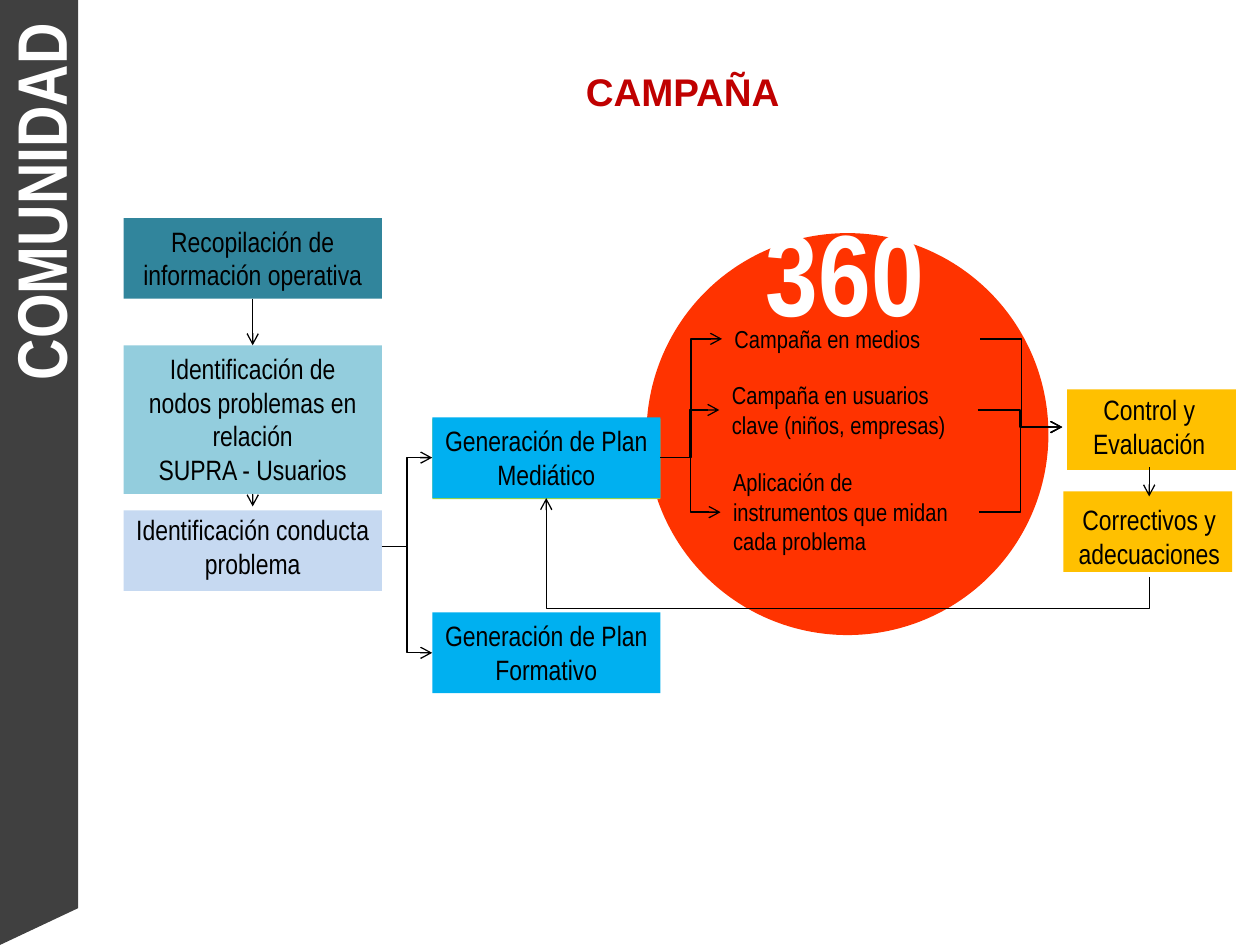
from lxml import etree
from pptx import Presentation
from pptx.dml.color import RGBColor
from pptx.enum.shapes import MSO_CONNECTOR, MSO_SHAPE
from pptx.enum.text import MSO_ANCHOR, MSO_AUTO_SIZE, PP_ALIGN
from pptx.oxml.ns import qn
from pptx.util import Pt

RECTANGLE, OVAL = MSO_SHAPE.RECTANGLE, MSO_SHAPE.OVAL
STRAIGHT, ELBOW = MSO_CONNECTOR.STRAIGHT, MSO_CONNECTOR.ELBOW
LEFT, CENTER = PP_ALIGN.LEFT, PP_ALIGN.CENTER
TOP = MSO_ANCHOR.TOP
NO_FIT = MSO_AUTO_SIZE.NONE
TOP_SIDE, BOTTOM_SIDE = 0, 2
NARROW = "Arial Narrow"
BLACK, WHITE = "000000", "FFFFFF"
STEP_HEIGHT = 46.1


def color(value):
    return RGBColor.from_string(value)


def write(shape, text, size, hue=BLACK, align=CENTER, font=NARROW, bold=False, wrap=True):
    frame = shape.text_frame
    frame.text = text
    frame.word_wrap = wrap
    frame.auto_size = NO_FIT
    frame.vertical_anchor = TOP
    for para in frame.paragraphs:
        para.alignment = align
        para.font.size = Pt(size)
        for span in para.runs:
            span.font.name = font
            span.font.size = Pt(size)
            span.font.bold = bold
            span.font.color.rgb = color(hue)


def paint(shape, fill):
    shape.shadow.inherit = False
    shape.fill.solid()
    shape.fill.fore_color.rgb = color(fill)
    shape.line.fill.background()


def add_block(page, box, fill, text="", kind=RECTANGLE):
    block = page.shapes.add_shape(kind, *map(Pt, box))
    paint(block, fill)
    if text:
        write(block, text, 16)
    return block


def add_label(page, box, text, size=16, **style):
    label = page.shapes.add_textbox(*map(Pt, box))
    write(label, text, size, **style)
    return label


def side_points(shape):
    """Middles of the left, top, right and bottom sides, in points."""
    left, top = shape.left.pt, shape.top.pt
    width, height = shape.width.pt, shape.height.pt
    return ((left, top + height / 2), (left + width / 2, top),
            (left + width, top + height / 2), (left + width / 2, top + height))


def add_arrow(page, kind, start, end, head=True):
    arrow = page.shapes.add_connector(kind, *map(Pt, (*start, *end)))
    arrow.line.color.rgb = color(BLACK)
    arrow.line.width = Pt(0.75)
    if head:
        tail = etree.SubElement(arrow.line._get_or_add_ln(), qn("a:tailEnd"))
        tail.set("type", "arrow")
    etree.SubElement(arrow._element.spPr, qn("a:effectLst"))
    return arrow


def link_down(page, upper, lower):
    arrow = add_arrow(page, STRAIGHT, side_points(upper)[3], side_points(lower)[1])
    arrow.begin_connect(upper, BOTTOM_SIDE)
    arrow.end_connect(lower, TOP_SIDE)


def link_across(page, source, target):
    add_arrow(page, ELBOW, side_points(source)[2], side_points(target)[0])


def link_back(page, source, target, drop=18):
    """Leave the source downwards, run left and rise to the target."""
    (start_x, start_y), (end_x, end_y) = side_points(source)[3], side_points(target)[3]
    middle_x, middle_y = (start_x + end_x) / 2, (start_y + end_y) / 2
    half_width, half_height = (start_y - end_y) / 2, (start_x - end_x) / 2
    arrow = add_arrow(page, ELBOW, (middle_x + half_width, middle_y - half_height),
                      (middle_x - half_width, middle_y + half_height))
    properties = arrow._element.spPr
    properties.find(qn("a:xfrm")).set("rot", "5400000")
    geometry = properties.find(qn("a:prstGeom"))
    guides = geometry.find(qn("a:avLst"))
    if guides is None:
        guides = etree.SubElement(geometry, qn("a:avLst"))
    guide = etree.SubElement(guides, qn("a:gd"))
    guide.set("name", "adj1")
    guide.set("fmla", f"val {round(-drop / (2 * half_width) * 100000)}")


def add_title(page, box):
    title = page.shapes.title
    title.left, title.top, title.width, title.height = map(Pt, box)
    write(title, "CAMPAÑA", 22, "C00000", LEFT, "Arial", bold=True)


def add_sidebar(page, box):
    left, top, width, height = box
    builder = page.shapes.build_freeform(Pt(left), Pt(top))
    corners = [(left + width, top), (left + width, top + height - 21), (left, top + height)]
    builder.add_line_segments([(Pt(x), Pt(y)) for x, y in corners], close=True)
    paint(builder.convert_to_shape(), "404040")
    label = add_label(page, (left - 87.8, top + 86.4, 220.3, 55.4), "COMUNIDAD", 40,
                      hue=WHITE, align=LEFT, bold=True, wrap=False)
    label.rotation = 270


def add_diagnosis(page, box):
    """Left column of steps; returns the last one."""
    left, top, width, _ = box
    gather = add_block(page, (left, top, width, STEP_HEIGHT), "31859C",
                       "Recopilación de información operativa")
    nodes = add_block(page, (left, top + 72.7, width, 85), "93CDDD",
                      "Identificación de nodos problemas en relación\nSUPRA - Usuarios")
    add_block(page, (left, top + 167, width, STEP_HEIGHT), "C6D9F1")
    conduct = add_label(page, (left, top + 164.8, width, STEP_HEIGHT),
                        "Identificación conducta problema")
    link_down(page, gather, nodes)
    link_down(page, nodes, conduct)
    return conduct


def add_plans(page, box):
    """Media plan above, training plan below."""
    left, top, width, height = box
    add_block(page, (left, top + 0.7, width, STEP_HEIGHT), "92D050")
    media = add_block(page, (left, top, width, STEP_HEIGHT), "00B0F0",
                      "Generación de Plan Mediático")
    training = add_block(page, (left, top + height - STEP_HEIGHT, width, STEP_HEIGHT),
                         "00B0F0", "Generación de Plan Formativo")
    return media, training


def add_actions(page, box):
    """Texts inside the circle; returns the three actions."""
    left, top, _, _ = box
    add_label(page, (left + 61.2, top - 21.6, 105.8, 87.1), "360", 66,
              hue=WHITE, align=LEFT, bold=True, wrap=False)
    actions = [(43.2, 48.2, 24.5, "Campaña en medios"),
               (41.7, 80.6, 41, "Campaña en usuarios clave (niños, empresas)"),
               (42.4, 130.3, 58.3, "Aplicación de instrumentos que midan cada problema")]
    return [add_label(page, (left + x, top + y, 147.6, height), text, 14, align=LEFT)
            for x, y, height, text in actions]


def add_control(page, box):
    """Evaluation steps on the right; returns both labels."""
    left, top, width, height = box
    for x, y in ((0.7, 59.8), (2.8, 1.5)):
        add_block(page, (left + x, top + y, 96.5, STEP_HEIGHT), "FFC000")
    review = add_label(page, (left, top, width, STEP_HEIGHT), "Control y Evaluación")
    fixes = add_label(page, (left, top + height - STEP_HEIGHT, width, STEP_HEIGHT),
                      "Correctivos y adecuaciones")
    link_down(page, review, fixes)
    return review, fixes


def main():
    deck = Presentation()
    deck.slide_width, deck.slide_height = Pt(720), Pt(540)
    page = deck.slides.add_slide(deck.slide_layouts[5])
    circle = (369.4, 133.2, 229.7, 229.7)

    add_title(page, (327.6, 35.3, 360, 33.8))
    add_sidebar(page, (0, 0, 44.6, 540))
    add_block(page, circle, "FF3300", kind=OVAL)
    conduct = add_diagnosis(page, (70.6, 124.6, 147.6, 213))
    media, training = add_plans(page, (247, 238.5, 130.3, 157.6))
    actions = add_actions(page, circle)
    review, fixes = add_control(page, (607, 221, 99.4, 108.8))

    # Links between the regions
    for plan in (media, training):
        link_across(page, conduct, plan)
    for action in actions:
        link_across(page, media, action)
        link_across(page, action, review)
    link_back(page, fixes, media)

    deck.save("out.pptx")


if __name__ == "__main__":
    main()
